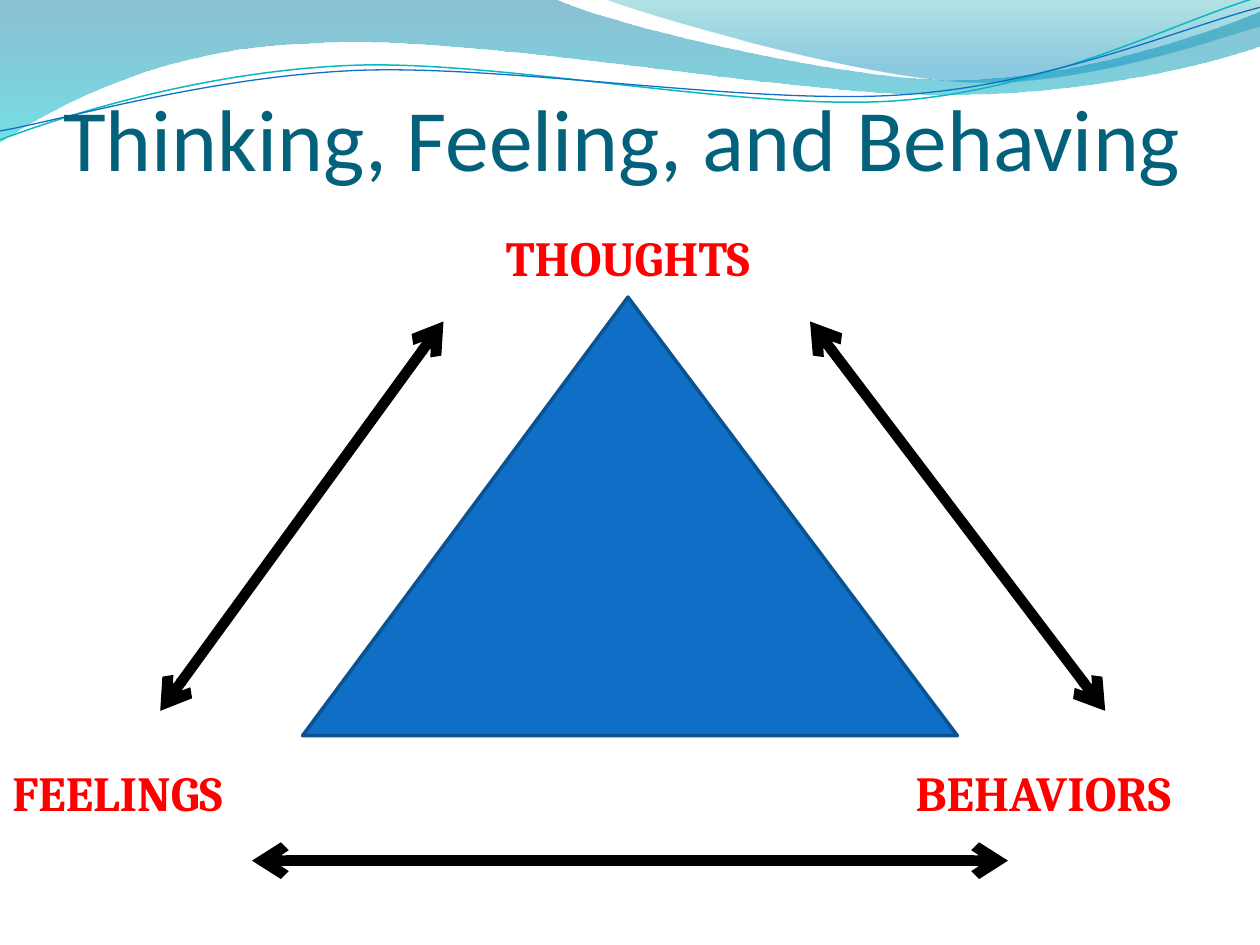
import pptx
import pptx.util
import pptx.dml.color
import pptx.enum.shapes
import pptx.enum.text
import pptx.oxml.ns
import lxml.etree

Cm = pptx.util.Cm
Pt = pptx.util.Pt
RGBColor = pptx.dml.color.RGBColor
qn = pptx.oxml.ns.qn

BLACK = RGBColor(0x00, 0x00, 0x00)
RED = RGBColor(0xFF, 0x00, 0x00)
TITLE_TEAL = RGBColor(0x04, 0x61, 0x7B)
BLUE = RGBColor(0x0F, 0x6F, 0xC6)
DARK_BLUE = RGBColor(0x0B, 0x52, 0x92)
LINE_TEAL = RGBColor(0x0A, 0xB8, 0xBF)
BAND_TOP = RGBColor(0x00, 0x74, 0xA1)
BAND_BOTTOM = RGBColor(0x00, 0xC6, 0xCF)
FAN_TOP = RGBColor(0x00, 0xA1, 0xA9)
FAN_BOTTOM = RGBColor(0x00, 0x8B, 0xBF)

TITLE = "Thinking, Feeling, and Behaving"
LABELS = [
    ("THOUGHTS", 9.95, 4.47, 6.3),
    ("FEELINGS", 0, 15.24, 5.72),
    ("BEHAVIORS", 18.21, 15.24, 6.3),
]
ARROWS = [
    ((16.33, 6.48), (22.28, 14.33)),
    ((8.94, 6.48), (3.23, 14.33)),
    ((5.08, 17.35), (20.32, 17.35)),
]
BANDS = [
    ((-0.03, -0.03),
     [[(11.18, -0.03)],
      [(12.09, 0.43), (16.87, 1.6), (19.25, 1.6)],
      [(21.67, 1.6), (24.33, 0.66), (25.4, 0.23)],
      [(25.43, 0.91)],
      [(24.97, 1.12), (22.1, 1.93), (18.95, 1.91)],
      [(15.8, 1.91), (9.7, 0.71), (6.53, 0.86)],
      [(3.28, 0.91), (1.17, 2.11), (-0.03, 2.87)]],
     [(0, BAND_TOP, 45), (1, BAND_BOTTOM, 55)]),
    ((12.17, -0.03),
     [[(12.93, 0.28), (17.32, 1.57), (19.53, 1.65)],
      [(21.74, 1.75), (24.41, 0.81), (25.4, 0.53)],
      [(25.4, 0)]],
     [(0, FAN_TOP, 30), (0.8, FAN_BOTTOM, 45)]),
]
WAVES = [
    ((0, 2.82),
     [[(1.22, 2.36), (4.01, 1.45), (7.04, 1.32)],
      [(10.03, 1.19), (15.06, 2.26), (18.11, 2.03)],
      [(21.16, 1.8), (23.83, 0.38), (25.35, -0.05)]],
     LINE_TEAL, 0.85),
    ((0, 2.64),
     [[(1.19, 2.44), (4.17, 1.55), (7.19, 1.42)],
      [(10.24, 1.3), (15.16, 2.13), (18.21, 1.91)],
      [(21.23, 1.7), (23.9, 0.53), (25.4, 0.15)]],
     BLUE, 0.75),
]
FIRST_BACKDROP_ID = 101


def write_text(shape, text, *, size, font, color, bold=False, margins=None,
               anchor=pptx.enum.text.MSO_ANCHOR.TOP):
    frame = shape.text_frame
    frame.word_wrap = True
    frame.auto_size = pptx.enum.text.MSO_AUTO_SIZE.NONE
    frame.vertical_anchor = anchor
    if margins:
        (frame.margin_left, frame.margin_top,
         frame.margin_right, frame.margin_bottom) = map(Cm, margins)
    paragraph = frame.paragraphs[0]
    paragraph.alignment = pptx.enum.text.PP_ALIGN.LEFT
    run = paragraph.add_run()
    run.text = text
    run.font.size = Pt(size)
    run.font.name = font
    run.font.bold = bold
    run.font.color.rgb = color


def draw_curve(slide, start, steps, closed):
    builder = slide.shapes.build_freeform(*map(Cm, start), scale=1.0)
    builder.add_line_segments([tuple(map(Cm, step[-1])) for step in steps], close=closed)
    curve = builder.convert_to_shape()
    curve.shadow.inherit = False
    edges = list(curve._element.iter(qn("a:lnTo")))
    for edge, step in zip(edges, steps):
        if len(step) == 3:
            bend = lxml.etree.Element(qn("a:cubicBezTo"))
            for x, y in step:
                lxml.etree.SubElement(bend, qn("a:pt"), x=str(Cm(x) - curve.left),
                                      y=str(Cm(y) - curve.top))
            edge.getparent().replace(edge, bend)
    return curve


def draw_band(slide, start, steps, stops):
    band = draw_curve(slide, start, steps, True)
    band.line.fill.background()
    band.fill.gradient()
    band.fill.gradient_angle = 270
    for stop, (position, color, _) in zip(band.fill.gradient_stops, stops):
        stop.position = position
        stop.color.rgb = color
    for color, (_, _, opacity) in zip(band._element.iter(qn("a:srgbClr")), stops):
        lxml.etree.SubElement(color, qn("a:alpha"), val=str(opacity * 1000))
    return band


def draw_wave(slide, start, steps, color, width):
    wave = draw_curve(slide, start, steps, False)
    wave.fill.background()
    wave.line.color.rgb = color
    wave.line.width = Pt(width)
    return wave


def draw_arrow(slide, begin, end):
    arrow = slide.shapes.add_connector(pptx.enum.shapes.MSO_CONNECTOR.STRAIGHT,
                                       *map(Cm, begin + end))
    arrow.line.color.rgb = BLACK
    arrow.line.width = Pt(6)
    properties = arrow._element.spPr
    for tip in ("a:headEnd", "a:tailEnd"):
        lxml.etree.SubElement(properties.find(qn("a:ln")), qn(tip), type="arrow")
    lxml.etree.SubElement(properties, qn("a:effectLst"))


def main():
    deck = pptx.Presentation()
    deck.slide_width, deck.slide_height = Cm(25.4), Cm(19.05)
    slide = deck.slides.add_slide(deck.slide_layouts[5])

    backdrop = [draw_band(slide, *band) for band in BANDS]
    backdrop += [draw_wave(slide, *wave) for wave in WAVES]
    master_tree = deck.slide_master.shapes._spTree
    for order, curve in enumerate(backdrop):
        curve._element.nvSpPr.cNvPr.set("id", str(FIRST_BACKDROP_ID + order))
        master_tree.insert(2 + order, curve._element)

    title = slide.shapes.title
    title.left, title.top, title.width, title.height = map(Cm, (1.27, 0.64, 22.86, 3.18))
    write_text(title, TITLE, size=50, font="Calibri", color=TITLE_TEAL,
               margins=(0, 0.13, 0, 0), anchor=pptx.enum.text.MSO_ANCHOR.BOTTOM)

    triangle = slide.shapes.add_shape(pptx.enum.shapes.MSO_SHAPE.ISOSCELES_TRIANGLE,
                                      *map(Cm, (6.1, 5.99, 13.2, 8.84)))
    triangle.adjustments[0] = 0.497
    triangle.shadow.inherit = False
    triangle.fill.solid()
    triangle.fill.fore_color.rgb = BLUE
    triangle.line.color.rgb = DARK_BLUE
    triangle.line.width = Pt(2)

    for begin, end in ARROWS:
        draw_arrow(slide, begin, end)
    for text, left, top, width in LABELS:
        label = slide.shapes.add_textbox(*map(Cm, (left, top, width, 1.45)))
        write_text(label, text, size=28, font="Cambria", color=RED, bold=True)

    deck.save("out.pptx")


if __name__ == "__main__":
    main()
